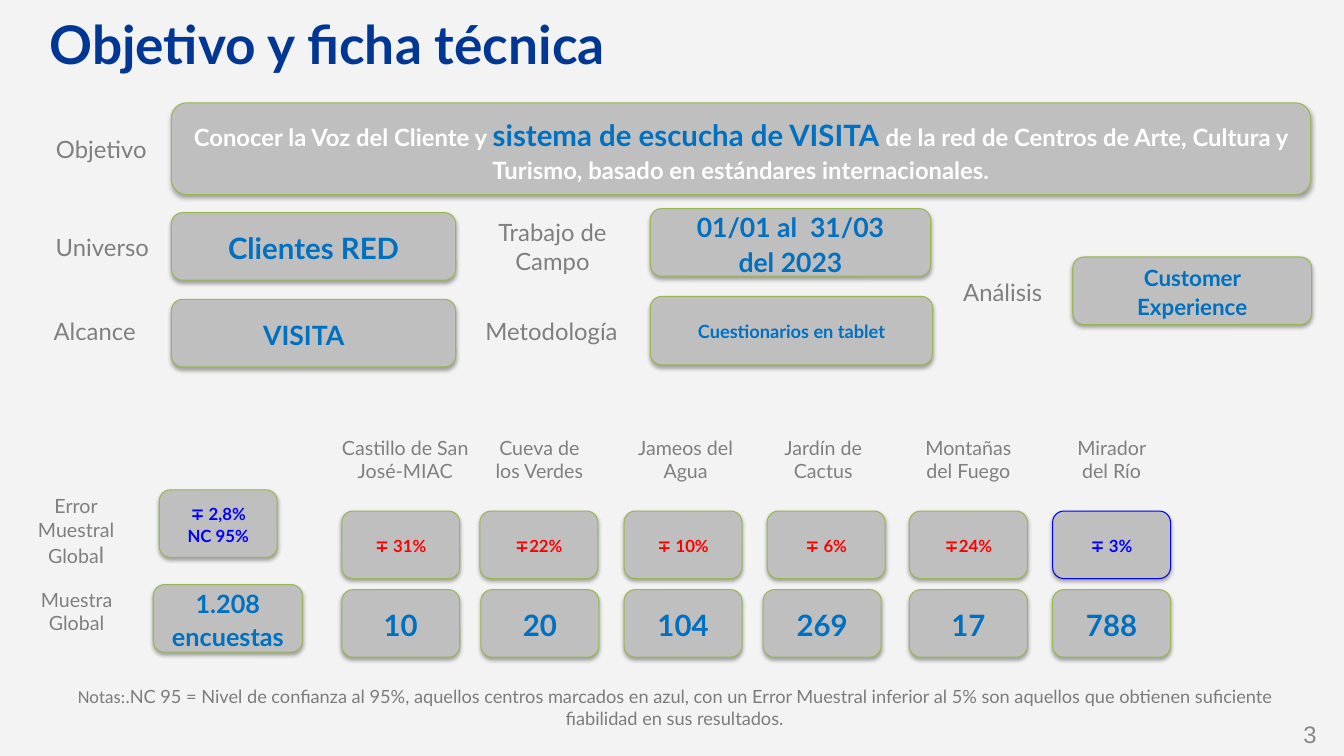
from dataclasses import dataclass
from typing import NamedTuple

from pptx import Presentation
from pptx.dml.color import RGBColor
from pptx.enum.shapes import MSO_SHAPE as Shape
from pptx.enum.text import MSO_ANCHOR as Anchor, MSO_AUTO_SIZE as AutoSize, PP_ALIGN as Align
from pptx.oxml import parse_xml
from pptx.oxml.ns import nsdecls
from pptx.slide import Slide
from pptx.text.text import TextFrame
from pptx.util import Inches, Pt


@dataclass(frozen=True)
class Theme:
    font: str = "Lato"
    note_font: str = "Calibri"
    number_font: str = "Arial"
    background: str = "F3F3F3"
    title: str = "003794"
    label: str = "7F7F7F"
    note: str = "7C7C7C"
    number: str = "888888"
    card: str = "BFBFBF"
    border: str = "97B853"
    value: str = "0070C0"
    white: str = "FFFFFF"
    reliable: str = "0000FF"
    unreliable: str = "FF0000"
    title_size: int = 38
    big_size: int = 21
    medium_size: int = 19
    sample_size: int = 18
    body_size: int = 17
    experience_size: int = 16
    small_size: int = 14
    note_size: int = 13
    error_size: int = 12


THEME = Theme()


class Box(NamedTuple):
    left: float
    top: float
    width: float
    height: float


class Span(NamedTuple):
    text: str
    size: int
    color: str
    font: str = THEME.font


class Label(NamedTuple):
    box: Box
    text: str
    size: int = THEME.body_size


class Card(NamedTuple):
    box: Box
    text: str
    size: int
    color: str = THEME.value


class Centre(NamedTuple):
    name: str
    name_left: float
    name_width: float
    error: str
    error_left: float
    sample: str
    sample_left: float
    reliable: bool = False


Paragraphs = list[list[Span]]


def rgb(value: str) -> RGBColor:
    return RGBColor.from_string(value)


def lines(text: str, size: int, color: str) -> Paragraphs:
    return [[Span(line, size, color)] for line in text.split("\n")]


def write(tf: TextFrame, paragraphs: Paragraphs, bold: bool = False, align: Align = Align.CENTER,
          anchor: Anchor = Anchor.MIDDLE, spacing: float = 1.0, inset: bool = True) -> None:
    tf.word_wrap = True
    tf.auto_size = AutoSize.NONE
    tf.vertical_anchor = anchor
    tf.margin_left = tf.margin_right = Inches(0.12 if inset else 0)
    tf.margin_top = tf.margin_bottom = Inches(0.06 if inset else 0)
    for i, spans in enumerate(paragraphs):
        p = tf.add_paragraph() if i else tf.paragraphs[0]
        p.alignment = align
        p.line_spacing = spacing
        for span in spans:
            r = p.add_run()
            r.text = span.text
            r.font.name = span.font
            r.font.size = Pt(span.size)
            r.font.bold = bold
            r.font.color.rgb = rgb(span.color)


def add_text(s: Slide, box: Box, paragraphs: Paragraphs, align: Align = Align.CENTER,
             anchor: Anchor = Anchor.MIDDLE, inset: bool = True) -> None:
    sp = s.shapes.add_textbox(*map(Inches, box))
    write(sp.text_frame, paragraphs, align=align, anchor=anchor, inset=inset)


def add_card(s: Slide, box: Box, paragraphs: Paragraphs, border: str = THEME.border) -> None:
    sp = s.shapes.add_shape(Shape.ROUNDED_RECTANGLE, *map(Inches, box))
    sp.adjustments[0] = 0.167
    sp.fill.solid()
    sp.fill.fore_color.rgb = rgb(THEME.card)
    sp.line.color.rgb = rgb(border)
    sp.line.width = Pt(0.75)
    sp.shadow.inherit = False
    # Soft shadow straight below the card
    sp.shadow._element.effectLst.append(parse_xml(
        f'<a:outerShdw {nsdecls("a")} blurRad="{Pt(3.1)}" dist="{Pt(1.8)}" dir="5400000" '
        'rotWithShape="0"><a:srgbClr val="000000"><a:alpha val="35000"/></a:srgbClr></a:outerShdw>'))
    write(sp.text_frame, paragraphs, bold=True, spacing=1.1)


CARD_HEIGHT = 0.67
CENTRE_WIDTH = 1.17
NAME_TOP, ERROR_TOP, SAMPLE_TOP = 4.2, 5.07, 5.85

LABELS = [
    Label(Box(0.31, 1.27, 1.39, 0.41), "Objetivo"),
    Label(Box(0.32, 2.24, 1.39, 0.41), "Universo"),
    Label(Box(0.24, 3.08, 1.46, 0.41), "Alcance "),
    Label(Box(4.53, 2.1, 1.9, 0.69), "Trabajo de\nCampo"),
    Label(Box(4.55, 3.08, 1.9, 0.41), "Metodología "),
    Label(Box(9.25, 2.69, 1.39, 0.41), "Análisis"),
    Label(Box(-0.01, 5.77, 1.54, 0.59), "Muestra Global", THEME.small_size),
]
CARDS = [
    Card(Box(1.7, 2.11, 2.82, CARD_HEIGHT), "Clientes RED", THEME.big_size),
    Card(Box(1.7, 2.97, 2.82, CARD_HEIGHT), "VISITA\t", THEME.medium_size),
    Card(Box(6.45, 2.07, 2.78, CARD_HEIGHT), "01/01 al  31/03\ndel 2023", THEME.medium_size),
    Card(Box(6.45, 2.94, 2.8, 0.68), "Cuestionarios en tablet", THEME.note_size),
    Card(Box(10.64, 2.55, 2.37, CARD_HEIGHT), "Customer Experience", THEME.experience_size),
    Card(Box(1.58, 4.86, CENTRE_WIDTH, CARD_HEIGHT), "∓ 2,8%\nNC 95%", THEME.error_size, THEME.reliable),
    Card(Box(1.52, 5.8, 1.48, CARD_HEIGHT), "1.208\nencuestas", THEME.sample_size),
]
CENTRES = [
    Centre("Castillo de San José-MIAC", 3.27, 1.5, "∓ 31%", 3.39, "10", 3.39),
    Centre("Cueva de los Verdes", 4.77, 1.16, "∓22%", 4.76, "20", 4.77),
    Centre("Jameos del Agua", 6.09, 1.42, "∓ 10%", 6.19, "104", 6.19),
    Centre("Jardín de Cactus", 7.44, 1.45, "∓ 6%", 7.61, "269", 7.57),
    Centre("Montañas del Fuego", 9.02, 1.17, "∓24%", 9.02, "17", 9.02),
    Centre("Mirador del Río", 10.44, 1.17, "∓ 3%", 10.44, "788", 10.44, reliable=True),
]


def add_centre(s: Slide, centre: Centre) -> None:
    add_text(s, Box(centre.name_left, NAME_TOP, centre.name_width, 0.71),
             lines(centre.name, THEME.small_size, THEME.label))
    add_card(s, Box(centre.error_left, ERROR_TOP, CENTRE_WIDTH, CARD_HEIGHT),
             lines(centre.error, THEME.error_size, THEME.reliable if centre.reliable else THEME.unreliable),
             THEME.reliable if centre.reliable else THEME.border)
    add_card(s, Box(centre.sample_left, SAMPLE_TOP, CENTRE_WIDTH, CARD_HEIGHT),
             lines(centre.sample, THEME.big_size, THEME.value))


def main() -> None:
    prs = Presentation()
    prs.slide_width, prs.slide_height = Inches(13.33), Inches(7.5)
    s = prs.slides.add_slide(prs.slide_layouts[5])
    s.background.fill.solid()
    s.background.fill.fore_color.rgb = rgb(THEME.background)

    # Title
    title = s.shapes.title
    title.left, title.top, title.width, title.height = map(Inches, Box(0.37, 0.02, 12.52, 0.82))
    write(title.text_frame, lines("Objetivo y ficha técnica", THEME.title_size, THEME.title),
          bold=True, align=Align.LEFT)

    # Objective
    add_card(s, Box(1.7, 1.02, 11.3, 0.91), [[
        Span("Conocer la Voz del Cliente y ", THEME.body_size, THEME.white),
        Span("sistema de escucha de VISITA ", THEME.big_size, THEME.value),
        Span("de la red de Centros de Arte, Cultura y Turismo, basado en estándares internacionales.",
             THEME.body_size, THEME.white)]])

    # Survey facts
    for label in LABELS:
        add_text(s, label.box, lines(label.text, label.size, THEME.label))
    for card in CARDS:
        add_card(s, card.box, lines(card.text, card.size, card.color))
    add_text(s, Box(0, 4.84, 1.51, 0.86), [
        [Span("Error", THEME.small_size, THEME.label)],
        [Span("Muestral Globa", THEME.small_size, THEME.label),
         Span("l", THEME.experience_size, THEME.label)]])

    # Results by centre
    for centre in CENTRES:
        add_centre(s, centre)

    # Notes and page number
    add_text(s, Box(0.37, 6.74, 12.64, 0.78), [[
        Span("Notas:", THEME.note_size, THEME.note, THEME.note_font),
        Span(".NC 95 = Nivel de confianza al 95%, aquellos centros marcados en azul, con un Error Muestral "
             "inferior al 5% son aquellos que obtienen suficiente fiabilidad en sus resultados.",
             THEME.note_size, THEME.note)]], anchor=Anchor.TOP)
    add_text(s, Box(10.73, 7.09, 2.33, 0.39),
             [[Span("3", THEME.body_size, THEME.number, THEME.number_font)]],
             align=Align.RIGHT, inset=False)

    prs.save("out.pptx")


if __name__ == "__main__":
    main()
